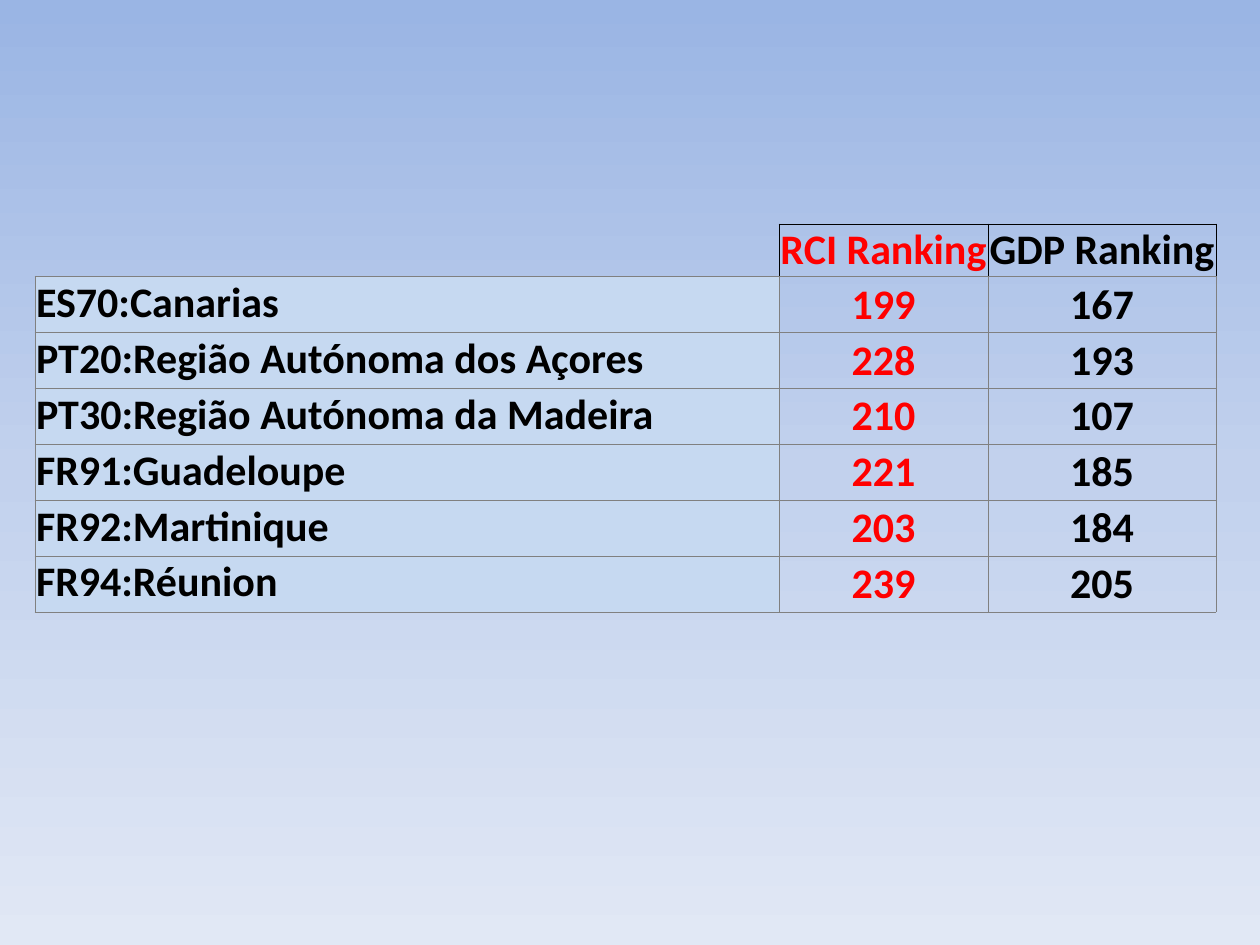
from copy import deepcopy

from lxml import etree
from pptx import Presentation
from pptx import util as u
from pptx.dml.color import RGBColor
from pptx.enum import text
from pptx.oxml.ns import qn

PX = 914400 / 126


def px(n):
    return u.Emu(round(n * PX))


def color(hex_string):
    return RGBColor.from_string(hex_string)


BLACK, RED, GREY, PALE_BLUE = "000000", "FF0000", "808080", "C6D9F1"

ROWS = [
    ("", "RCI Ranking", "GDP Ranking"),
    ("ES70:Canarias", "199", "167"),
    ("PT20:Região Autónoma dos Açores", "228", "193"),
    ("PT30:Região Autónoma da Madeira", "210", "107"),
    ("FR91:Guadeloupe", "221", "185"),
    ("FR92:Martinique", "203", "184"),
    ("FR94:Réunion", "239", "205"),
]
COLUMN_WIDTHS = [744, 209, 228]
HEADER_HEIGHT, ROW_HEIGHT = 49, 56
COLUMN_COLORS = [BLACK, RED, BLACK]

deck = Presentation()
deck.slide_width, deck.slide_height = px(1260), px(945)
page = deck.slides.add_slide(deck.slide_layouts[6])

# Background: three-stop vertical gradient
background = page.background.fill
background.gradient()
background.gradient_angle = 270
stop_list = page.element.find(".//" + qn("a:gsLst"))
stop_list.append(deepcopy(stop_list[0]))
gradient = [(0, "9AB5E4"), (0.5, "C2D1ED"), (1, "E1E8F5")]
for stop, (position, shade) in zip(background.gradient_stops, gradient):
    stop.position = position
    stop.color.rgb = color(shade)

# Ranking table
table_height = HEADER_HEIGHT + ROW_HEIGHT * (len(ROWS) - 1)
table = page.shapes.add_table(
    len(ROWS), len(COLUMN_WIDTHS),
    px(35), px(224), px(sum(COLUMN_WIDTHS)), px(table_height)).table
table.first_row = table.horz_banding = False
for column, width in zip(table.columns, COLUMN_WIDTHS):
    column.width = px(width)

for r, values in enumerate(ROWS):
    table.rows[r].height = px(ROW_HEIGHT if r else HEADER_HEIGHT)
    for c, value in enumerate(values):
        cell = table.cell(r, c)

        # Borders: black around the header cells, grey elsewhere, open corner
        edges = dict.fromkeys(("lnL", "lnR", "lnT", "lnB"), GREY)
        if r == 0:
            edges.update(lnL=BLACK, lnR=BLACK, lnT=BLACK)
            if c == 0:
                edges.update(lnL=None, lnT=None)
        properties = cell._tc.get_or_add_tcPr()
        for edge, shade in edges.items():
            line = etree.SubElement(properties, qn("a:" + edge), w=str(u.Pt(0.5)))
            if shade:
                solid = etree.SubElement(line, qn("a:solidFill"))
                etree.SubElement(solid, qn("a:srgbClr"), val=shade)
            else:
                etree.SubElement(line, qn("a:noFill"))

        # Fill: region names only
        if r and c == 0:
            cell.fill.solid()
            cell.fill.fore_color.rgb = color(PALE_BLUE)
        else:
            cell.fill.background()

        # Text
        cell.margin_left = cell.margin_top = cell.margin_right = px(1)
        cell.margin_bottom = 0
        if not value:
            continue
        para = cell.text_frame.paragraphs[0]
        if c:
            cell.vertical_anchor = text.MSO_ANCHOR.MIDDLE
            para.alignment = text.PP_ALIGN.CENTER
        span = para.add_run()
        span.text = value
        span.font.name = "Calibri"
        span.font.size = u.Pt(24)
        span.font.bold = True
        span.font.color.rgb = color(COLUMN_COLORS[c])

deck.save("out.pptx")
